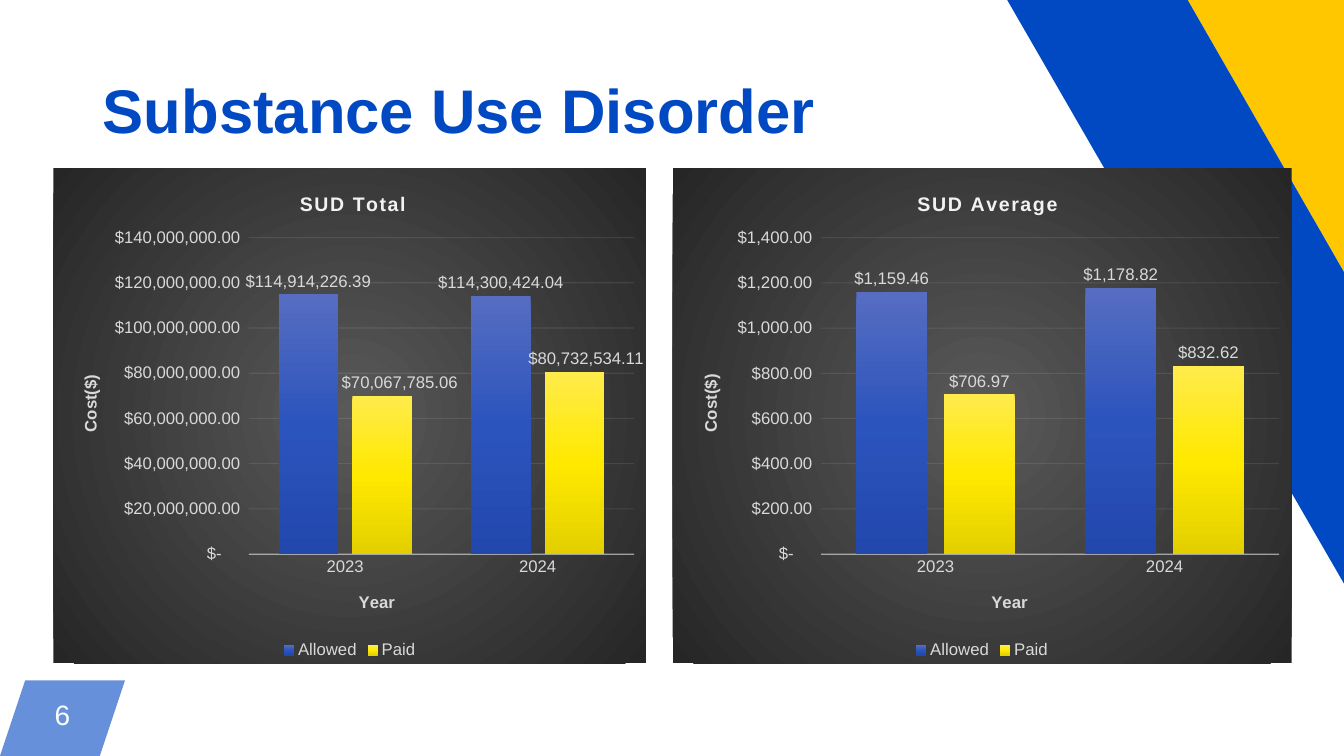
from dataclasses import dataclass
from pptx import Presentation, util as u
from pptx.chart.data import CategoryChartData
from pptx.dml.color import RGBColor
from pptx.enum import chart as ch, text
from pptx.oxml import parse_xml
from pptx.oxml.ns import nsdecls, qn

Inches, Pt = u.Inches, u.Pt


@dataclass(frozen=True)
class Theme:
    font: str = "Arial"
    blue: str = "0049C2"
    yellow: str = "FFC700"
    white: str = "FFFFFF"
    pale: str = "F2F2F2"
    label: str = "D9D9D9"
    panel: tuple = ((0, "595959"), (100, "262626"))
    bars: tuple = (((0, "566DC1"), (50, "2C54BD"), (100, "2248AD")),
                   ((0, "FFEB4B"), (50, "FFE900"), (100, "E3CF00")))
    title_size: int = 44
    number_size: int = 20
    chart_title_size: int = 14
    chart_size: int = 12


T = Theme()
MONEY = r'_("$"* #,##0.00_);_("$"* \(#,##0.00\);_("$"* "-"??_);_(@_)'
RADIAL = '<a:path path="circle"><a:fillToRect l="50000" t="50000" r="50000" b="50000"/></a:path>'
DOWNWARD = '<a:lin ang="5400000" scaled="0"/>'


def style(font, size, color, bold=False):
    font.name, font.size, font.bold = T.font, Pt(size), bold
    font.color.rgb = RGBColor.from_string(color)


def fade(element, percent):
    color = element.xpath(".//a:srgbClr")[0]
    color.append(parse_xml(f'<a:alpha {nsdecls("a")} val="{percent * 1000}"/>'))


def gradient(stops, direction):
    marks = "".join(f'<a:gs pos="{pos * 1000}"><a:srgbClr val="{color}"/></a:gs>'
                    for pos, color in stops)
    return parse_xml(f'<a:gradFill {nsdecls("a")} rotWithShape="1">'
                     f'<a:gsLst>{marks}</a:gsLst>{direction}</a:gradFill>')


def arrange(element, index=0, **values):
    """Give a chart part a manual layout in fractions of the chart."""
    layout = element.find(qn("c:layout"))
    if layout is None:
        layout = parse_xml(f'<c:layout {nsdecls("c")}/>')
        element.insert(index, layout)
    items = "".join(f'<c:{key} val="{value}"/>' for key, value in values.items())
    layout.append(parse_xml(f'<c:manualLayout {nsdecls("c")}>{items}</c:manualLayout>'))


def polygon(s, x, y, points, color):
    pts = [(Inches(x + dx), Inches(y + dy)) for dx, dy in points]
    builder = s.shapes.build_freeform(*pts[0])
    builder.add_line_segments(pts[1:], close=True)
    sp = builder.convert_to_shape()
    sp.shadow.inherit = False
    sp.fill.solid()
    sp.fill.fore_color.rgb = RGBColor.from_string(color)
    sp.line.fill.background()
    return sp


# Corner bands, clipped at the slide edge
def add_bands(s, x, y, w):
    inner, low, high = 1.79, 2.7, 5.79
    polygon(s, x, y, [(inner, 0), (w, 0), (w, low)], T.yellow)
    polygon(s, x, y, [(0, 0), (inner, 0), (w, low), (w, high)], T.blue)


# Slanted page-number badge
def add_badge(s, x, y, w, h, number):
    slant = 0.25
    sp = polygon(s, x, y, [(slant, 0), (w, 0), (w - slant, h), (0, h)], T.blue)
    fade(sp._element.spPr, 60)
    box = s.shapes.add_textbox(Inches(x + slant), Inches(y), Inches(w - 2 * slant), Inches(h))
    tf = box.text_frame
    tf.word_wrap = True
    tf.vertical_anchor = text.MSO_ANCHOR.MIDDLE
    tf.margin_left = tf.margin_right = tf.margin_top = tf.margin_bottom = Inches(0.04)
    p = tf.paragraphs[0]
    p.text = number
    p.alignment = text.PP_ALIGN.CENTER
    p.line_spacing = Pt(17.7)
    style(p.font, T.number_size, T.white)


# Slide title
def add_title(s, x, y, w, h, words):
    sp = s.shapes.title
    sp.left, sp.top, sp.width, sp.height = map(Inches, (x, y, w, h))
    tf = sp.text_frame
    tf.auto_size = text.MSO_AUTO_SIZE.NONE
    tf.vertical_anchor = text.MSO_ANCHOR.MIDDLE
    p = tf.paragraphs[0]
    p.text = words
    p.alignment = text.PP_ALIGN.LEFT
    p.line_spacing = 0.9
    style(p.font, T.title_size, T.blue, bold=True)


def caption(title, words, size, color, x, y):
    p = title.text_frame.paragraphs[0]
    p.text = words
    style(p.font, size, color, bold=True)
    arrange(title._element, xMode="edge", yMode="edge", x=x, y=y)
    return p


def style_line(line, width, percent):
    line.width = Pt(width)
    line.color.rgb = RGBColor.from_string(T.pale)
    fade(line._get_or_add_ln(), percent)


def style_axis(axis, words, x, y):
    axis.major_tick_mark = axis.minor_tick_mark = ch.XL_TICK_MARK.NONE
    style(axis.tick_labels.font, T.chart_size, T.label)
    caption(axis.axis_title, words, T.chart_size, T.label, x, y)


# Cost chart on a dark panel
def add_cost_chart(s, x, y, w, h, name, allowed, paid, top, plot, title_x, year_x, shifts=()):
    data = CategoryChartData(number_format=MONEY)
    data.categories = ["2023", "2024"]
    data.add_series("Allowed", allowed)
    data.add_series("Paid", paid)
    chart = s.shapes.add_chart(ch.XL_CHART_TYPE.COLUMN_CLUSTERED, Inches(x), Inches(y),
                               Inches(w), Inches(h), data).chart
    style(chart.font, T.chart_size, T.label)
    panel = parse_xml(f'<c:spPr {nsdecls("c", "a")}><a:ln><a:noFill/></a:ln></c:spPr>')
    panel.insert(0, gradient(T.panel, RADIAL))
    space = chart._chartSpace
    space.find(qn("c:chart")).addnext(panel)

    p = caption(chart.chart_title, name, T.chart_title_size, T.pale, title_x, 0.04)
    p.font._element.set("spc", "100")
    chart.has_legend = True
    chart.legend.position = ch.XL_LEGEND_POSITION.BOTTOM
    chart.legend.include_in_layout = False
    style(chart.legend.font, T.chart_size, T.label)

    style_axis(chart.category_axis, "Year", year_x, 0.85)
    style_line(chart.category_axis.format.line, 1, 54)
    cost = chart.value_axis
    style_axis(cost, "Cost($)", 0.04, 0.41)
    cost.minimum_scale, cost.maximum_scale, cost.major_unit = 0, top, top / 7
    cost.tick_labels.number_format = MONEY
    cost.tick_labels.number_format_is_linked = False
    cost.format.line.fill.background()
    style_line(cost.major_gridlines.format.line, 0.75, 10)

    left, width = plot
    arrange(space.xpath(".//c:plotArea")[0], layoutTarget="inner", xMode="edge",
            yMode="edge", x=left, y=0.14, w=width, h=0.64)
    bars = chart.plots[0]
    bars.gap_width, bars.overlap, bars.vary_by_categories = 100, -24, False
    for series, stops in zip(bars.series, T.bars):
        series._element.get_or_add_spPr().append(gradient(stops, DOWNWARD))
        labels = series.data_labels
        labels.show_value = True
        labels.position = ch.XL_LABEL_POSITION.OUTSIDE_END
        labels.number_format, labels.number_format_is_linked = MONEY, False
        style(labels.font, T.chart_size, T.label)
    # Move the Paid labels clear of the neighbouring bars
    for i, shift in enumerate(shifts):
        label = bars.series[1].points[i].data_label
        style(label.font, T.chart_size, T.label)
        label.position = ch.XL_LABEL_POSITION.OUTSIDE_END
        arrange(bars.series[1].data_labels._element.xpath("c:dLbl")[i], 1, x=shift, y=0)


def main():
    prs = Presentation()
    prs.slide_width, prs.slide_height = Inches(13.33), Inches(7.5)
    s = prs.slides.add_slide(prs.slide_layouts[5])
    add_badge(s, 0, 6.75, 1.24, 0.75, "6")
    add_bands(s, 9.99, 0, 3.34)
    add_title(s, 0.92, 0.4, 11.5, 1.45, "Substance Use Disorder")
    add_cost_chart(s, 0.53, 1.67, 5.91, 4.91, "SUD Total",
                   (114914226.39, 114300424.04), (70067785.06, 80732534.11),
                   140000000, (0.33, 0.65), 0.41, 0.51, shifts=(0.03, 0.02))
    add_cost_chart(s, 6.67, 1.67, 6.14, 4.91, "SUD Average",
                   (1159.46, 1178.82), (706.97, 832.62),
                   1400, (0.24, 0.74), 0.39, 0.51)
    prs.save("out.pptx")


if __name__ == "__main__":
    main()
